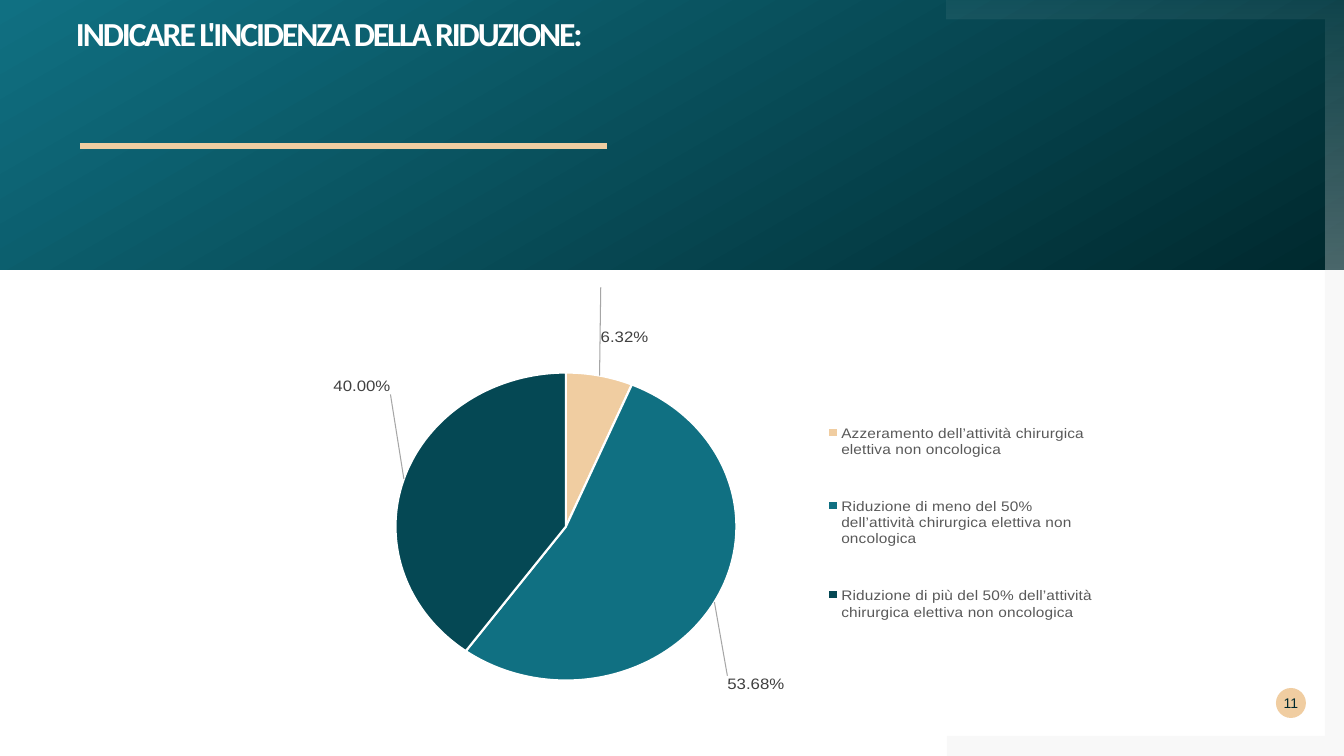
"""Build the slide on the reduction of elective surgery, with its pie chart."""
from copy import deepcopy
from dataclasses import dataclass

from lxml.etree import SubElement
from pptx import Presentation
from pptx.chart.data import CategoryChartData
from pptx.dml.color import RGBColor
from pptx.dml.fill import FillFormat
from pptx.enum.chart import XL_CHART_TYPE, XL_LABEL_POSITION, XL_LEGEND_POSITION
from pptx.enum.shapes import MSO_CONNECTOR, MSO_SHAPE
from pptx.enum.text import MSO_ANCHOR, MSO_AUTO_SIZE, PP_ALIGN
from pptx.oxml.ns import qn
from pptx.shapes.autoshape import Shape
from pptx.slide import Slide
from pptx.text.text import Font, TextFrame
from pptx.util import Emu, Pt

SLIDE_WIDTH, SLIDE_HEIGHT = 1344, 756
EMU_PER_PX = 12192000 / SLIDE_WIDTH


@dataclass(frozen=True)
class Theme:
    white: str = "FFFFFF"
    grey: str = "808080"
    leader: str = "A6A6A6"
    label: str = "404040"
    legend: str = "595959"
    black: str = "000000"
    ink: str = "00292E"
    teal: str = "107082"
    deep_teal: str = "054854"
    sand: str = "F0CDA1"
    heading_font: str = "Calibri"
    body_font: str = "Arial"
    title_size: float = 24
    label_size: float = 12
    legend_size: float = 11
    small_size: float = 10
    rule_width: float = 4.32
    slice_gap: float = 1.5


@dataclass(frozen=True)
class Box:
    left: int
    top: int
    width: int
    height: int

    def emu(self) -> tuple[Emu, Emu, Emu, Emu]:
        return px(self.left), px(self.top), px(self.width), px(self.height)


@dataclass(frozen=True)
class Slice:
    name: str
    value: float
    color: str
    label_shift: tuple[float, float]


@dataclass(frozen=True)
class Stop:
    color: str
    alpha: int = 100


THEME = Theme()
BAND = Box(0, 0, SLIDE_WIDTH, 270)
TITLE = Box(76, 17, 1231, 119)
BADGE = Box(1276, 688, 30, 30)
CHART = Box(320, 287, 781, 437)
RULE_LEFT, RULE_RIGHT, RULE_Y = 80, 607, 146
FRAME_LEFT, FRAME_INNER, FRAME_WIDTH = 947, 1325, 20
PLOT_LAYOUT = {"x": 0.06, "y": 0.11, "w": 0.51, "h": 0.78}
LEGEND_LAYOUT = {"x": 0.64, "y": 0.14, "w": 0.36, "h": 0.7}
SLICES = (
    Slice("Azzeramento dell’attività chirurgica elettiva non oncologica",
          6.32, THEME.sand, (0, -0.21)),
    Slice("Riduzione di meno del 50% dell’attività chirurgica elettiva non oncologica",
          53.68, THEME.teal, (0.01, 0.18)),
    Slice("Riduzione di più del 50% dell’attività chirurgica elettiva non oncologica",
          40, THEME.deep_teal, (-0.01, -0.21)),
)


def px(length: int) -> Emu:
    return Emu(round(length * EMU_PER_PX))


def style_font(font: Font, name: str, size: float, color: str, bold: bool = False) -> None:
    font.name = name
    font.size = Pt(size)
    font.bold = bold
    font.color.rgb = RGBColor.from_string(color)


def clear_margins(frame: TextFrame) -> None:
    frame.margin_left = frame.margin_top = frame.margin_right = frame.margin_bottom = 0


def set_alpha(fill: FillFormat, shape: Shape, alphas: list[int]) -> None:
    for color, alpha in zip(shape.element.spPr.iter(qn("a:srgbClr")), alphas):
        SubElement(color, qn("a:alpha")).set("val", str(alpha * 1000))


def fill_solid(shape: Shape, color: str, alpha: int = 100) -> None:
    shape.shadow.inherit = False
    shape.line.fill.background()
    shape.fill.solid()
    shape.fill.fore_color.rgb = RGBColor.from_string(color)
    if alpha < 100:
        set_alpha(shape.fill, shape, [alpha])


def fill_gradient(shape: Shape, stops: tuple[Stop, Stop], angle: int) -> None:
    shape.shadow.inherit = False
    shape.line.fill.background()
    shape.fill.gradient()
    shape.fill.gradient_angle = angle
    for gradient_stop, stop in zip(shape.fill.gradient_stops, stops):
        gradient_stop.color.rgb = RGBColor.from_string(stop.color)
    set_alpha(shape.fill, shape, [stop.alpha for stop in stops])


def add_corner(slide: Slide, outer_y: int, inner_y: int) -> Shape:
    points = [(SLIDE_WIDTH, outer_y), (SLIDE_WIDTH, BAND.height), (FRAME_INNER, BAND.height),
              (FRAME_INNER, inner_y), (FRAME_LEFT, inner_y)]
    builder = slide.shapes.build_freeform(FRAME_LEFT, outer_y, EMU_PER_PX)
    builder.add_line_segments(points, close=True)
    return builder.convert_to_shape()


def add_background(slide: Slide) -> None:
    lower = add_corner(slide, SLIDE_HEIGHT, SLIDE_HEIGHT - FRAME_WIDTH)
    fill_solid(lower, THEME.grey, 5)
    band = slide.shapes.add_shape(MSO_SHAPE.RECTANGLE, *BAND.emu())
    fill_gradient(band, (Stop(THEME.ink), Stop(THEME.teal)), 120)
    upper = add_corner(slide, 0, FRAME_WIDTH)
    fill_gradient(upper, (Stop(THEME.white, 5), Stop(THEME.white, 30)), 270)


def add_title(slide: Slide) -> None:
    title = slide.shapes.title
    title.element.getparent().append(title.element)
    title.left, title.top, title.width, title.height = TITLE.emu()
    frame = title.text_frame
    frame.text = "INDICARE L'INCIDENZA DELLA RIDUZIONE:"
    frame.word_wrap = True
    frame.auto_size = MSO_AUTO_SIZE.NONE
    frame.vertical_anchor = MSO_ANCHOR.TOP
    clear_margins(frame)
    para = frame.paragraphs[0]
    para.alignment = PP_ALIGN.LEFT
    para.line_spacing = 0.9
    style_font(para.font, THEME.heading_font, THEME.title_size, THEME.white, True)
    para.runs[0].font.bold = True
    para.runs[0].font._element.set("spc", "-150")


def add_badge(slide: Slide) -> None:
    badge = slide.shapes.add_shape(MSO_SHAPE.OVAL, *BADGE.emu())
    fill_solid(badge, THEME.sand)
    frame = badge.text_frame
    frame.text = "11"
    frame.word_wrap = False
    frame.vertical_anchor = MSO_ANCHOR.MIDDLE
    clear_margins(frame)
    para = frame.paragraphs[0]
    para.alignment = PP_ALIGN.CENTER
    style_font(para.font, THEME.body_font, THEME.small_size, THEME.ink)


def add_rule(slide: Slide) -> None:
    rule = slide.shapes.add_connector(
        MSO_CONNECTOR.STRAIGHT, px(RULE_LEFT), px(RULE_Y), px(RULE_RIGHT), px(RULE_Y))
    rule.line.color.rgb = RGBColor.from_string(THEME.sand)
    rule.line.width = Pt(THEME.rule_width)
    SubElement(rule.element.spPr, qn("a:effectLst"))


def set_layout(parent, index: int, values: dict[str, float], edges: bool = True) -> None:
    for old in parent.findall(qn("c:layout")):
        parent.remove(old)
    layout = parent.makeelement(qn("c:layout"))
    parent.insert(index, layout)
    manual = SubElement(layout, qn("c:manualLayout"))
    modes = {"xMode": "edge", "yMode": "edge"} if edges else {}
    for tag, value in (modes | values).items():
        SubElement(manual, qn(f"c:{tag}")).set("val", str(value))


def add_labels(series) -> None:
    labels = series.data_labels
    labels.show_value = False
    labels.show_percentage = True
    labels.number_format = "0.00%"
    labels.number_format_is_linked = False
    labels.position = XL_LABEL_POSITION.OUTSIDE_END
    style_font(labels.font, THEME.body_font, THEME.label_size, THEME.label)
    root = labels._element
    shared = [child for child in root if child.tag != qn("c:showLeaderLines")]
    for index, part in enumerate(SLICES):
        label = root.makeelement(qn("c:dLbl"))
        root.insert(index, label)
        SubElement(label, qn("c:idx")).set("val", str(index))
        set_layout(label, 1, dict(zip("xy", part.label_shift)), edges=False)
        label.extend([deepcopy(child) for child in shared])
    leader = SubElement(SubElement(root, qn("c:leaderLines")), qn("c:spPr"))
    line = SubElement(leader, qn("a:ln"), w="9525")
    SubElement(SubElement(line, qn("a:solidFill")), qn("a:srgbClr"), val=THEME.leader)


def add_pie(slide: Slide) -> None:
    data = CategoryChartData()
    data.categories = [part.name for part in SLICES]
    data.add_series("Series 1", [part.value for part in SLICES])
    chart = slide.shapes.add_chart(XL_CHART_TYPE.PIE, *CHART.emu(), data).chart
    chart.has_title = False
    style_font(chart.font, THEME.body_font, THEME.small_size, THEME.black)
    chart.has_legend = True
    chart.legend.position = XL_LEGEND_POSITION.RIGHT
    chart.legend.include_in_layout = False
    style_font(chart.legend.font, THEME.body_font, THEME.legend_size, THEME.legend)
    set_layout(chart.legend._element, 1, LEGEND_LAYOUT)
    plot = chart.plots[0]
    plot.vary_by_categories = True
    set_layout(plot._element.getparent(), 0, {"layoutTarget": "inner"} | {
        "xMode": "edge", "yMode": "edge"} | PLOT_LAYOUT, edges=False)
    series = plot.series[0]
    for index, part in enumerate(SLICES):
        form = series.points[index].format
        form.fill.solid()
        form.fill.fore_color.rgb = RGBColor.from_string(part.color)
        form.line.color.rgb = RGBColor.from_string(THEME.white)
        form.line.width = Pt(THEME.slice_gap)
    add_labels(series)


def main() -> None:
    deck = Presentation()
    deck.slide_width, deck.slide_height = px(SLIDE_WIDTH), px(SLIDE_HEIGHT)
    slide = deck.slides.add_slide(deck.slide_layouts[5])
    add_background(slide)
    add_title(slide)
    add_badge(slide)
    add_rule(slide)
    add_pie(slide)
    deck.save("out.pptx")


if __name__ == "__main__":
    main()
